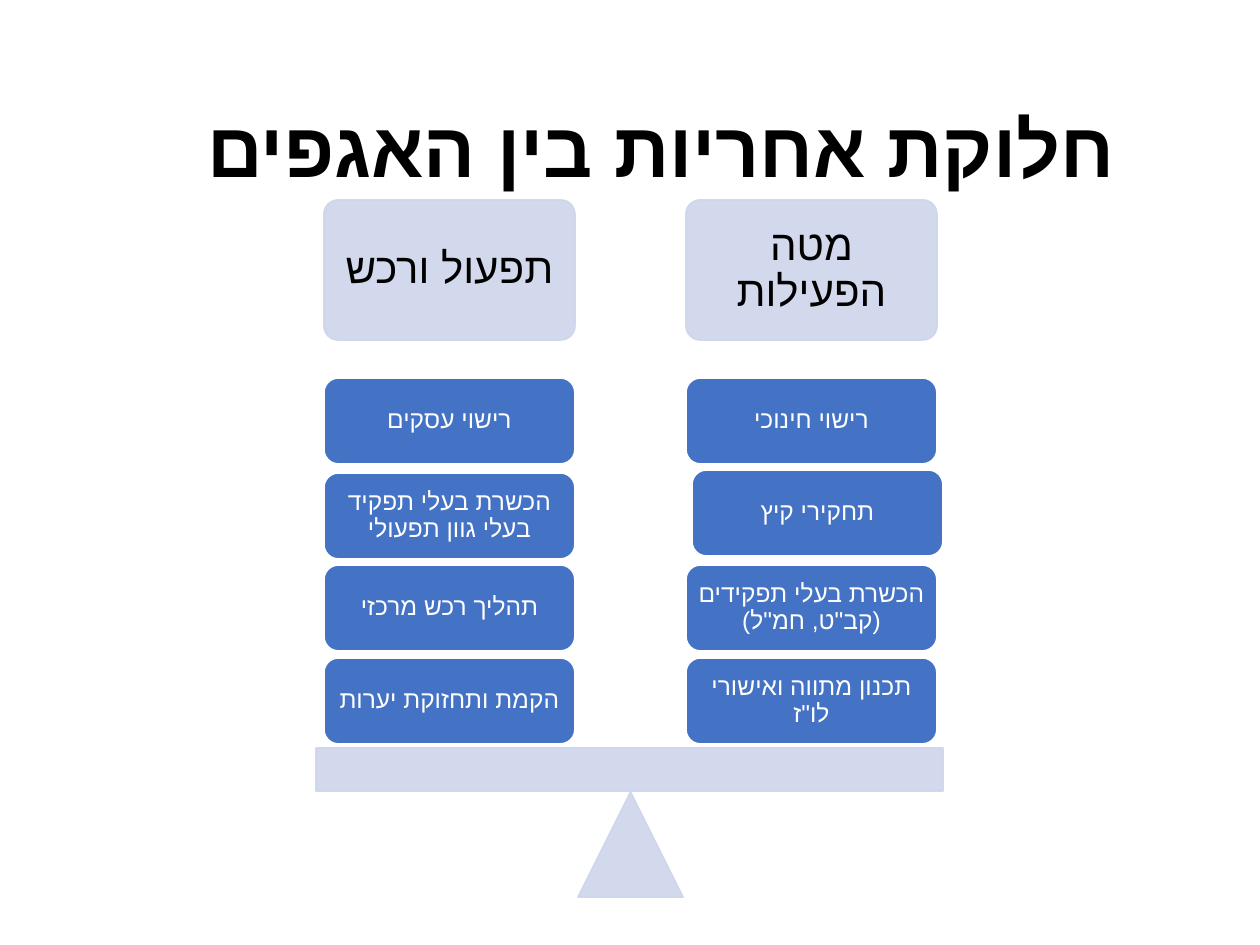
import pptx
import pptx.util
import pptx.dml.color
import pptx.enum.shapes
import pptx.enum.text
import pptx.oxml.ns
import lxml.etree

RGB = pptx.dml.color.RGBColor
KIND = pptx.enum.shapes.MSO_SHAPE
ALIGN = pptx.enum.text.PP_ALIGN
ANCHOR = pptx.enum.text.MSO_ANCHOR
SCALE = 914400 / 126

BLACK = RGB(0x00, 0x00, 0x00)
WHITE = RGB(0xFF, 0xFF, 0xFF)
PALE = RGB(0xCF, 0xD5, 0xEA)
BLUE = RGB(0x44, 0x72, 0xC4)

TITLE = "חלוקת אחריות בין האגפים"
SIDES = [
    (324, "תפעול ורכש", [
        "רישוי עסקים",
        "הכשרת בעלי תפקיד בעלי גוון תפעולי",
        "תהליך רכש מרכזי",
        "הקמת ותחזוקת יערות",
    ]),
    (686, "מטה הפעילות", [
        "רישוי חינוכי",
        "תחקירי קיץ",
        "הכשרת בעלי תפקידים (קב\"ט, חמ\"ל)",
        "תכנון מתווה ואישורי לו\"ז",
    ]),
]
TOPS = [378, 473, 565, 658]
MOVED = {"תחקירי קיץ": (692, 470)}
WIDE = 251


def px(size):
    return round(size * SCALE)


def apply(item, form):
    for name, value in form.items():
        setattr(item, name, value)


class Board:
    font = "Arial"

    def __init__(self, deck):
        self.slide = deck.slides.add_slide(deck.slide_layouts[5])

    def label(self, frame, text, size, color, pad, space=0.9, bold=False):
        margins = {f"margin_{side}": px(pad) for side in ("left", "right", "top", "bottom")}
        apply(frame, {"word_wrap": True, "vertical_anchor": ANCHOR.MIDDLE, **margins})
        para = frame.paragraphs[0]
        apply(para, {"alignment": ALIGN.CENTER, "line_spacing": space})
        para._p.get_or_add_pPr().set("rtl", "1")
        run = para.add_run()
        run.text = text
        apply(run.font, {"name": self.font, "size": pptx.util.Pt(size), "bold": bold})
        run.font.color.rgb = color
        props = run._r.get_or_add_rPr()
        props.set("lang", "he-IL")
        script = lxml.etree.SubElement(props, pptx.oxml.ns.qn("a:cs"))
        script.set("typeface", self.font)

    def title(self, text, *box):
        shape = self.slide.shapes.title
        apply(shape, dict(zip(("left", "top", "width", "height"), map(px, box))))
        self.label(shape.text_frame, text, 44, BLACK, 6, space=1.0, bold=True)

    def shape(self, kind, box, fill, line):
        shape = self.slide.shapes.add_shape(kind, *map(px, box))
        shape.shadow.inherit = False
        shape.fill.solid()
        shape.fill.fore_color.rgb = fill
        shape.line.color.rgb = line
        shape.line.width = pptx.util.Pt(1)
        return shape

    def pale(self, kind, *box):
        shape = self.shape(kind, box, PALE, PALE)
        for color in shape._element.spPr.iter(pptx.oxml.ns.qn("a:srgbClr")):
            alpha = lxml.etree.SubElement(color, pptx.oxml.ns.qn("a:alpha"))
            alpha.set("val", "90000")
        return shape

    def head(self, text, *box):
        shape = self.pale(KIND.ROUNDED_RECTANGLE, *box)
        shape.adjustments[0] = 0.1
        self.label(shape.text_frame, text, 24, BLACK, 12)

    def card(self, text, *box):
        shape = self.shape(KIND.ROUNDED_RECTANGLE, box, BLUE, WHITE)
        self.label(shape.text_frame, text, 14, WHITE, 8)


def main():
    deck = pptx.Presentation()
    apply(deck, {"slide_width": px(1260), "slide_height": px(945)})
    board = Board(deck)
    board.title(TITLE, 71, 94, 1181, 106)
    board.pale(KIND.ISOSCELES_TRIANGLE, 578, 792, 105, 105)
    board.pale(KIND.RECTANGLE, 316, 748, 627, 43)
    for left, head, cards in SIDES:
        board.head(head, left, 200, WIDE, 140)
        for top, text in zip(TOPS, cards):
            board.card(text, *MOVED.get(text, (left, top)), WIDE, 86)
    deck.save("out.pptx")


if __name__ == "__main__":
    main()
